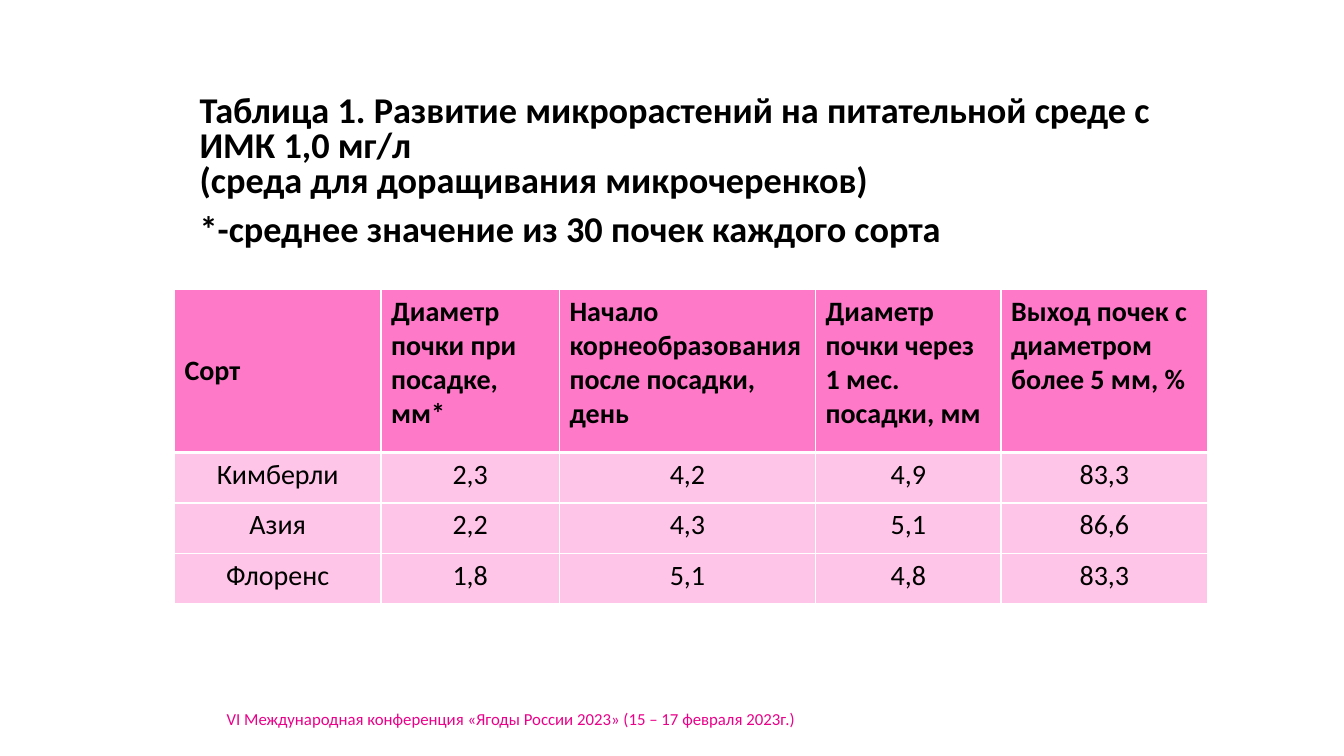
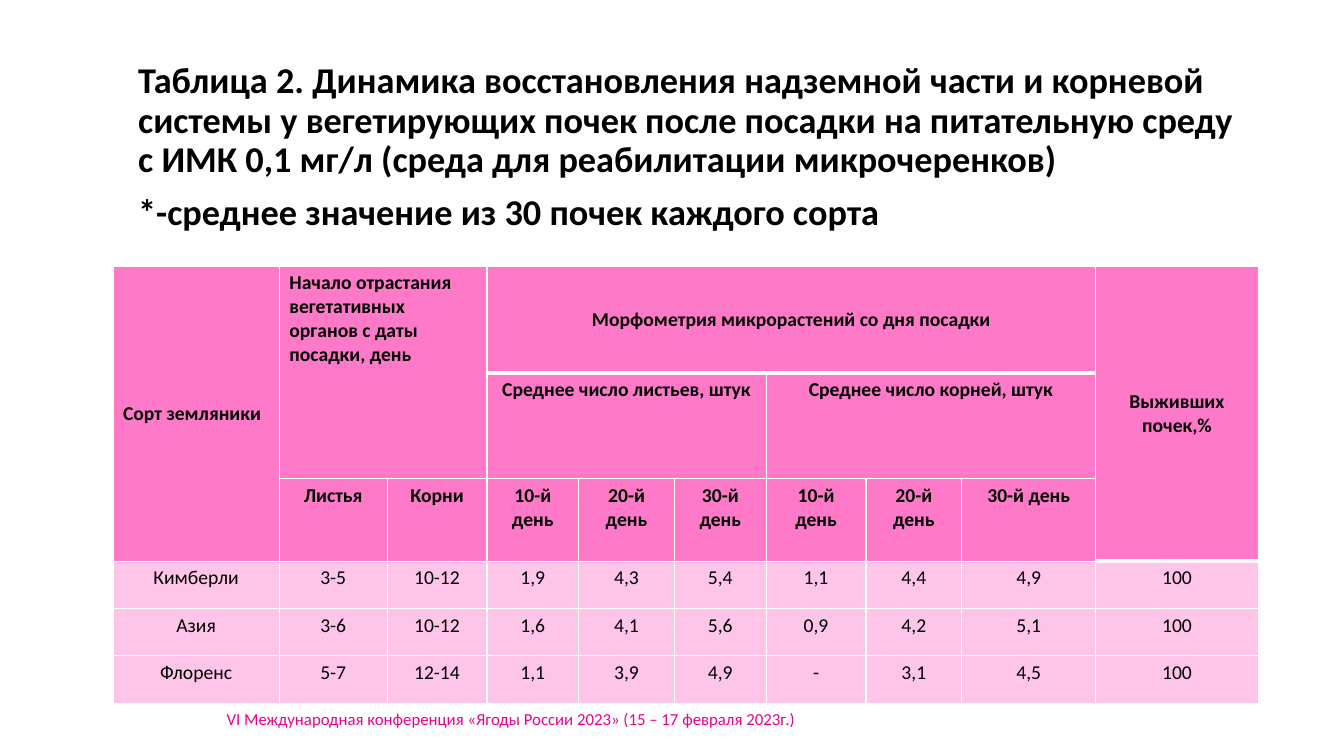
from dataclasses import dataclass

from lxml import etree
from pptx import Presentation
from pptx.dml.color import RGBColor
from pptx.enum.text import MSO_ANCHOR, MSO_AUTO_SIZE, PP_ALIGN
from pptx.oxml.ns import qn
from pptx.util import Inches, Pt

LEFT, CENTER = PP_ALIGN.LEFT, PP_ALIGN.CENTER
TOP, MIDDLE = MSO_ANCHOR.TOP, MSO_ANCHOR.MIDDLE
NO_AUTOFIT = MSO_AUTO_SIZE.NONE
TITLE_ONLY = 5


@dataclass(frozen=True)
class Theme:
    font: str = "Calibri"
    text: str = "000000"
    accent: str = "EB008A"
    header: str = "FF79C9"
    body: str = "FFC5E8"
    border: str = "FFFFFF"
    title_size: float = 25.9
    footer_size: float = 12
    thin: float = 1
    thick: float = 3


THEME = Theme()
FOOTER = "VI Международная конференция «Ягоды России 2023» (15 – 17 февраля 2023г.)"
SAMPLE_NOTE = "*-среднее значение из 30 почек каждого сорта"
DAYS = ("10-й день", "20-й день", "30-й день")

# Header cells: row, column, rows spanned, columns spanned, text, alignment, anchor.
# Thick edges: (row, column) of the cells with a heavy line below.
GROWTH = {
    "title": "Таблица 1. Развитие микрорастений на питательной среде с ИМК 1,0 мг/л\v"
             "(среда для доращивания микрочеренков)",
    "title_box": (1.73, 0.9, 10.01, 1.73),
    "line_spacing": 0.8,
    "table_at": (1.73, 2.87),
    "columns": (2.05, 1.77, 2.54, 1.84, 2.05),
    "header_rows": (1.62,),
    "body_row": 0.5,
    "size": 20,
    "headers": [
        (0, 0, 1, 1, "Сорт", LEFT, MIDDLE),
        (0, 1, 1, 1, "Диаметр почки при посадке, мм*", LEFT, TOP),
        (0, 2, 1, 1, "Начало корнеобразования после посадки, день", LEFT, TOP),
        (0, 3, 1, 1, "Диаметр почки через 1 мес. посадки, мм", LEFT, TOP),
        (0, 4, 1, 1, "Выход почек с диаметром более 5 мм, %", LEFT, TOP),
    ],
    "thick_edges": {(0, col) for col in range(5)},
    "body": [
        ("Кимберли", "2,3", "4,2", "4,9", "83,3"),
        ("Азия", "2,2", "4,3", "5,1", "86,6"),
        ("Флоренс", "1,8", "5,1", "4,8", "83,3"),
    ],
}

RECOVERY = {
    "title": "Таблица 2. Динамика восстановления надземной части и корневой системы "
             "у вегетирующих почек после посадки на питательную среду с ИМК 0,1 мг/л "
             "(среда для реабилитации микрочеренков)",
    "title_box": (1.12, 0.57, 11.37, 2.06),
    "line_spacing": 0.9,
    "table_at": (1.12, 2.64),
    "columns": (1.65, 1.07, 0.99, 0.91, 0.95, 0.91, 0.99, 0.95, 1.33, 1.61),
    "header_rows": (1.06, 0.83, 0.82),
    "body_row": 0.47,
    "size": 14,
    "headers": [
        (0, 0, 3, 1, "Сорт земляники", LEFT, MIDDLE),
        (0, 1, 2, 2, "Начало отрастания вегетативных органов с даты посадки, день",
         LEFT, TOP),
        (0, 3, 1, 6, "Морфометрия микрорастений со дня посадки", CENTER, MIDDLE),
        (0, 9, 3, 1, "Выживших почек,%", CENTER, MIDDLE),
        (1, 3, 1, 3, "Среднее число листьев, штук", CENTER, TOP),
        (1, 6, 1, 3, "Среднее число корней, штук", CENTER, TOP),
        *((2, col, 1, 1, label, CENTER, TOP)
          for col, label in enumerate(("Листья", "Корни") + DAYS * 2, start=1)),
    ],
    "thick_edges": {(0, col) for col in range(3, 9)} | {(2, 9)},
    "body": [
        ("Кимберли", "3-5", "10-12", "1,9", "4,3", "5,4", "1,1", "4,4", "4,9", "100"),
        ("Азия", "3-6", "10-12", "1,6", "4,1", "5,6", "0,9", "4,2", "5,1", "100"),
        ("Флоренс", "5-7", "12-14", "1,1", "3,9", "4,9", "-", "3,1", "4,5", "100"),
    ],
}


def style_font(paragraph, size, color=THEME.text, bold=False):
    font = paragraph.font
    font.name, font.size, font.bold = THEME.font, Pt(size), bold
    font.color.rgb = RGBColor.from_string(color)


def add_title(slide, content):
    title = slide.shapes.title
    title.left, title.top, title.width, title.height = map(Inches, content["title_box"])
    frame = title.text_frame
    frame.word_wrap, frame.auto_size, frame.vertical_anchor = True, NO_AUTOFIT, TOP
    for index, text in enumerate((content["title"], SAMPLE_NOTE)):
        paragraph = frame.add_paragraph() if index else frame.paragraphs[0]
        paragraph.text = text
        paragraph.alignment = LEFT
        paragraph.line_spacing = content["line_spacing"]
        paragraph.space_before = Pt(10 if index else 0)
        paragraph._p.get_or_add_pPr().set("marL", str(Inches(0.15)))
        style_font(paragraph, THEME.title_size, bold=True)


def fill_cell(cell, text, size, alignment=CENTER, anchor=TOP, bold=False):
    cell.text = text
    cell.vertical_anchor = anchor
    paragraph = cell.text_frame.paragraphs[0]
    paragraph.alignment = alignment
    style_font(paragraph, size, bold=bold)


def set_borders(cell, top, bottom):
    properties = cell._tc.get_or_add_tcPr()
    widths = (("a:lnL", THEME.thin), ("a:lnR", THEME.thin), ("a:lnT", top), ("a:lnB", bottom))
    for tag, width in widths:
        line = etree.SubElement(properties, qn(tag), w=str(Pt(width)))
        solid = etree.SubElement(line, qn("a:solidFill"))
        etree.SubElement(solid, qn("a:srgbClr"), val=THEME.border)


def add_results_table(slide, content):
    columns, header_rows, body = content["columns"], content["header_rows"], content["body"]
    heights = header_rows + (content["body_row"],) * len(body)
    table = slide.shapes.add_table(
        len(heights), len(columns), *map(Inches, content["table_at"]),
        Inches(sum(columns)), Inches(sum(heights))).table
    table.horz_banding = False
    for column, width in zip(table.columns, columns):
        column.width = Inches(width)
    for row, height in zip(table.rows, heights):
        row.height = Inches(height)

    for row, col, rows, cols, text, alignment, anchor in content["headers"]:
        cell = table.cell(row, col)
        if rows * cols > 1:
            cell.merge(table.cell(row + rows - 1, col + cols - 1))
        fill_cell(cell, text, content["size"], alignment, anchor, bold=True)
    for row, values in enumerate(body, start=len(header_rows)):
        for col, value in enumerate(values):
            fill_cell(table.cell(row, col), value, content["size"])

    def edge(row, col):
        return THEME.thick if (row, col) in content["thick_edges"] else THEME.thin

    for row in range(len(heights)):
        color = THEME.header if row < len(header_rows) else THEME.body
        for col in range(len(columns)):
            cell = table.cell(row, col)
            last_row = row + cell.span_height - 1 if cell.is_merge_origin else row
            set_borders(cell, edge(row - 1, col), edge(last_row, col))
            cell.fill.solid()
            cell.fill.fore_color.rgb = RGBColor.from_string(color)


def add_master_footer(prs, slide):
    """Create the footer on a slide, then move it to the master so all slides share it."""
    footer = slide.shapes.add_textbox(*map(Inches, (2.15, 6.98, 6.67, 0.3)))
    footer.text_frame.word_wrap = True
    paragraph = footer.text_frame.paragraphs[0]
    paragraph.text = FOOTER
    style_font(paragraph, THEME.footer_size, THEME.accent)
    prs.slide_master.shapes._spTree.append(footer._element)


def main():
    prs = Presentation()
    prs.slide_width, prs.slide_height = Inches(13.33), Inches(7.5)
    for content in (GROWTH, RECOVERY):
        slide = prs.slides.add_slide(prs.slide_layouts[TITLE_ONLY])
        add_title(slide, content)
        add_results_table(slide, content)
    add_master_footer(prs, slide)
    prs.save("out.pptx")


if __name__ == "__main__":
    main()
